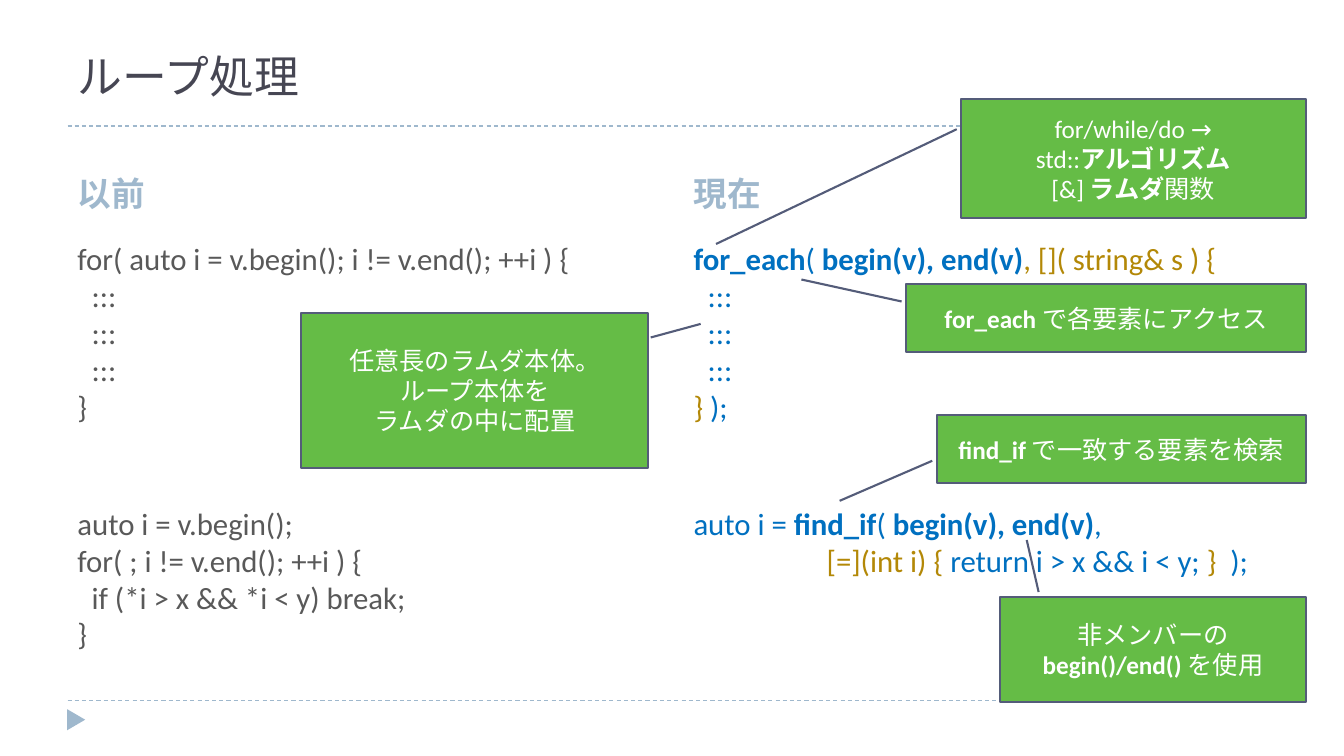
from lxml import etree
from pptx import Presentation
from pptx.dml.color import RGBColor
from pptx.enum.dml import MSO_LINE
from pptx.enum.shapes import MSO_CONNECTOR, MSO_SHAPE
from pptx.enum.text import MSO_ANCHOR, PP_ALIGN
from pptx.oxml.ns import qn
from pptx.util import Inches, Pt

TOP, MIDDLE, BOTTOM = MSO_ANCHOR.TOP, MSO_ANCHOR.MIDDLE, MSO_ANCHOR.BOTTOM
LEFT, CENTER = PP_ALIGN.LEFT, PP_ALIGN.CENTER
CALLOUT, TRIANGLE = MSO_SHAPE.LINE_CALLOUT_1, MSO_SHAPE.ISOSCELES_TRIANGLE
STRAIGHT, DASH = MSO_CONNECTOR.STRAIGHT, MSO_LINE.DASH

COLORS = {
    "title": "464653", "accent": "9FB8CD", "old": "595959", "new": "0070C0",
    "lambda": "B38807", "callout": "65BC46", "border": "545C79", "white": "FFFFFF",
}
BOLD = {"bold": True}
LAMBDA = {"color": "lambda"}
COLUMN_LEFTS = (0.67, 6.78)
COLUMN_WIDTH = 5.89
BODY_INDENT = 0.14
LAMBDA_INDENT = 1.32
BLOCK_GAP = 57

OLD_CODE = [
    {"runs": ["for( auto i = v.begin(); i != v.end(); ++i ) {"], "before": 6},
    *[{"runs": [":::"], "indent": BODY_INDENT}] * 3,
    {"runs": ["}"]},
    {"runs": ["auto i = v.begin();"], "before": BLOCK_GAP},
    {"runs": ["for( ; i != v.end(); ++i ) {"]},
    {"runs": ["if (*i > x && *i < y) break;"], "indent": BODY_INDENT},
    {"runs": ["}"]},
]
NEW_CODE = [
    {"runs": [("for_each", BOLD), "( ", ("begin(v), end(v)", BOLD),
              (", []( string& s ) {", LAMBDA)], "before": 6},
    *[{"runs": [":::"], "indent": BODY_INDENT}] * 3,
    {"runs": [("} ", LAMBDA), ");"]},
    {"runs": ["auto i = ", ("find_if", BOLD), "( ", ("begin(v), end(v)", BOLD), ","],
     "before": BLOCK_GAP},
    {"runs": [("[=](int i) { ", LAMBDA), "return i > x && i < y; ", ("}  ", LAMBDA), ");"],
     "indent": LAMBDA_INDENT},
]
CALLOUTS = [
    ((9.53, 0.98, 3.42, 1.18), (0.256, -0.012, 1.221, -0.71),
     [["for/while/do ", ("→", {"font": "Karla"})],
      ["std::", ("アルゴリズム", BOLD)],
      ["[&] ", ("ラムダ", BOLD), "関数"]]),
    ((8.99, 2.82, 3.96, 0.67), (0.256, -0.012, -0.07, -0.263),
     [[("for_each", BOLD), " で各要素にアクセス"]]),
    ((9.29, 4.12, 3.66, 0.67), (0.674, -0.012, 1.267, -0.263),
     [[("find_if ", BOLD), "で一致する要素を検索"]]),
    ((9.92, 5.92, 3.03, 1.04), (-0.045, 0.126, -0.541, 0.087),
     [["非メンバーの ", ("begin()/end()", BOLD), " を使用"]]),
    ((2.99, 3.11, 3.44, 1.53), (0.156, 1.007, 0.068, 1.151),
     [["任意長のラムダ本体。"], ["ループ本体を"], ["ラムダの中に配置"]]),
]


def rgb(name):
    """Return the palette colour of that name."""
    return RGBColor.from_string(COLORS[name])


def write_text(frame, lines, size, color, font="Calibri", bold=False, align=LEFT, anchor=TOP):
    """Fill a text frame with lines of runs, each run free to override the format."""
    frame.word_wrap = True
    frame.vertical_anchor = anchor
    for number, line in enumerate(lines):
        paragraph = frame.paragraphs[0] if number == 0 else frame.add_paragraph()
        paragraph.alignment = align
        paragraph.space_before = Pt(line.get("before", 0))
        if "indent" in line:
            paragraph._p.get_or_add_pPr().set("marL", str(Inches(line["indent"])))
        for piece in line["runs"]:
            words, changes = (piece, {}) if isinstance(piece, str) else piece
            run = paragraph.add_run()
            run.text = words
            run.font.size = Pt(size)
            run.font.name = changes.get("font", font)
            run.font.bold = changes.get("bold", bold)
            run.font.color.rgb = rgb(changes.get("color", color))


def add_text(slide, box, lines, **text_format):
    """Add a text box holding the lines."""
    area = slide.shapes.add_textbox(*map(Inches, box))
    write_text(area.text_frame, lines, **text_format)


def add_rule(slide, y):
    """Add a dashed rule across the slide."""
    rule = slide.shapes.add_connector(
        STRAIGHT, Inches(0.67), Inches(y), Inches(12.66), Inches(y))
    rule.line.color.rgb = rgb("accent")
    rule.line.width = Pt(0.75)
    rule.line.dash_style = DASH
    etree.SubElement(rule._element.spPr, qn("a:effectLst"))


def add_filled_shape(slide, kind, box, color):
    """Add a flat preset shape without outline."""
    shape = slide.shapes.add_shape(kind, *map(Inches, box))
    shape.shadow.inherit = False
    shape.fill.solid()
    shape.fill.fore_color.rgb = rgb(color)
    shape.line.fill.background()
    return shape


def add_callout(slide, box, pointer, lines):
    """Add a green note whose pointer leads to the code it explains."""
    note = add_filled_shape(slide, CALLOUT, box, "callout")
    note.line.color.rgb = rgb("border")
    note.line.width = Pt(1.5)
    for index, value in enumerate(pointer):
        note.adjustments[index] = value
    write_text(note.text_frame, [{"runs": runs} for runs in lines],
               size=18, color="white", align=CENTER, anchor=MIDDLE)


def main():
    """Build the slide and save it."""
    deck = Presentation()
    deck.slide_width, deck.slide_height = Inches(13.33), Inches(7.5)
    slide = deck.slides.add_slide(deck.slide_layouts[6])

    for y in (6.95, 1.25):
        add_rule(slide, y)
    page_marker = add_filled_shape(slide, TRIANGLE, (0.65, 7.05, 0.21, 0.18), "accent")
    page_marker.rotation = 90

    add_text(slide, (0.67, 0.25, 12, 1), [{"runs": ["ループ処理"]}],
             size=32, color="title", font="TeX Gyre Bonum", anchor=MIDDLE)
    columns = (("以前", OLD_CODE, "old"), ("現在", NEW_CODE, "new"))
    for left, (heading, code, color) in zip(COLUMN_LEFTS, columns):
        add_text(slide, (left, 1.41, COLUMN_WIDTH, 0.75), [{"runs": [heading], "before": 6}],
                 size=24, color="accent", bold=True, anchor=BOTTOM)
        add_text(slide, (left, 2.33, COLUMN_WIDTH, 4.6), code, size=22, color=color)
    for box, pointer, lines in CALLOUTS:
        add_callout(slide, box, pointer, lines)

    deck.save("out.pptx")


if __name__ == "__main__":
    main()
